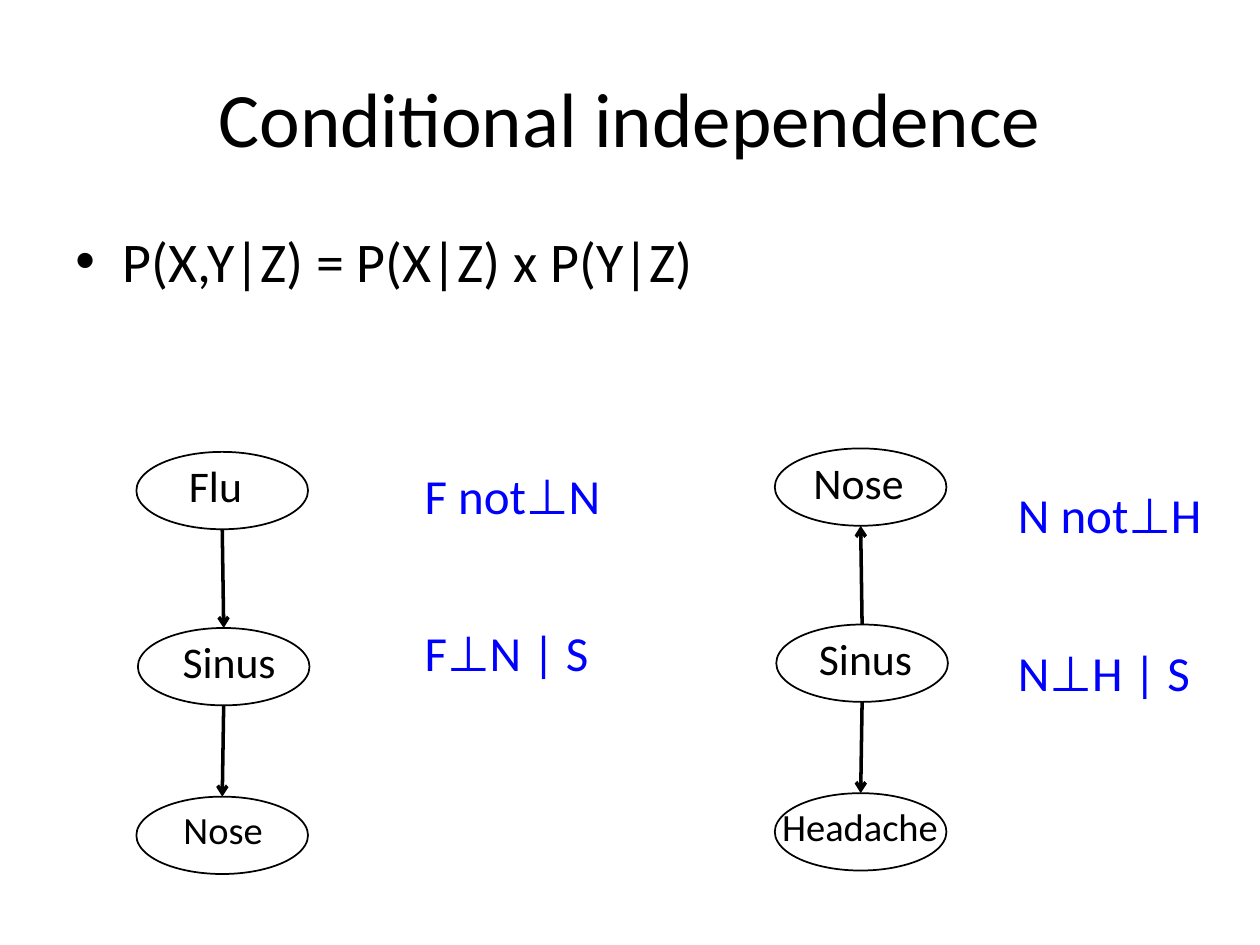
from lxml import etree
from pptx import Presentation
from pptx.dml.color import RGBColor
from pptx.enum.shapes import MSO_CONNECTOR, MSO_SHAPE
from pptx.enum.text import MSO_ANCHOR, PP_ALIGN
from pptx.oxml.ns import qn
from pptx.util import Cm, Pt

LEFT, CENTER = PP_ALIGN.LEFT, PP_ALIGN.CENTER
TOP, MIDDLE = MSO_ANCHOR.TOP, MSO_ANCHOR.MIDDLE
ELLIPSE = MSO_SHAPE.OVAL
STRAIGHT = MSO_CONNECTOR.STRAIGHT
TOP_SITE = 0

NODE_WIDTH, NODE_HEIGHT = 3.46, 1.56
NODE_STEPS = (0, 3.55, 6.95)
NODE_SHIFTS = (0, 0.03, 0)
LABEL_STYLES = ((25, 0.02, 1.32), (25, 0.02, 1.32), (22, 0.07, 1.19))
STATEMENT_STEP = 3.18


def color(value):
    return RGBColor.from_string(value)


class Painter:
    """Holds the style and the slide being drawn; lengths are centimetres."""

    font = "Calibri"
    ink = "000000"
    accent = "0000FF"

    def __init__(self, page):
        self.page = page

    def text(self, words, left, top, width, height, size, fill=ink,
             align=LEFT, anchor=TOP, wrap=True):
        box = self.page.shapes.add_textbox(Cm(left), Cm(top), Cm(width), Cm(height))
        frame = box.text_frame
        frame.word_wrap = wrap
        frame.vertical_anchor = anchor
        para = frame.paragraphs[0]
        para.text = words
        para.alignment = align
        para.font.name = self.font
        para.font.size = Pt(size)
        para.font.color.rgb = color(fill)
        return para

    def bullet(self, words, left, top, width, height, size):
        para = self.text(words, left, top, width, height, size)
        para.space_before = Pt(0.2 * size)
        properties = para._p.get_or_add_pPr()
        properties.set("marL", str(Cm(0.95)))
        properties.set("indent", str(-Cm(0.95)))
        etree.SubElement(properties, qn("a:buFont"), typeface="Arial")
        etree.SubElement(properties, qn("a:buChar"), char="•")

    def node(self, left, top):
        shape = self.page.shapes.add_shape(
            ELLIPSE, Cm(left), Cm(top), Cm(NODE_WIDTH), Cm(NODE_HEIGHT))
        shape.shadow.inherit = False
        shape.fill.background()
        shape.line.color.rgb = color(self.ink)
        shape.line.width = Pt(1)
        return shape

    def arrow(self, upper, lower, upward=False):
        """Link the bottom of one node to the top of the next."""
        start_x = upper.left + upper.width // 2
        start_y = upper.top + upper.height
        line = self.page.shapes.add_connector(
            STRAIGHT, start_x, start_y, start_x, lower.top)
        line.end_connect(lower, TOP_SITE)
        line.line.color.rgb = color(self.ink)
        line.line.width = Pt(2)
        end = "a:headEnd" if upward else "a:tailEnd"
        etree.SubElement(line.line._get_or_add_ln(), qn(end), type="arrow")
        etree.SubElement(line._element.spPr, qn("a:effectLst"))

    def chain(self, left, top, labels, first_upward=False):
        """Draw three labelled nodes, one under another, joined by arrows."""
        nodes = []
        for step, shift, style, label in zip(
                NODE_STEPS, NODE_SHIFTS, LABEL_STYLES, labels):
            words, label_left, label_width = label
            size, drop, label_height = style
            nodes.append(self.node(left + shift, top + step))
            self.text(words, label_left, top + step + drop,
                      label_width, label_height, size)
        self.arrow(nodes[0], nodes[1], first_upward)
        self.arrow(nodes[1], nodes[2])

    def statements(self, left, top, lines):
        for index, (words, width) in enumerate(lines):
            self.text(words, left, top + index * STATEMENT_STEP, width, 1.45, 28,
                      self.accent, wrap=False)


def main():
    deck = Presentation()
    deck.slide_width, deck.slide_height = Cm(25.4), Cm(19.05)
    painter = Painter(deck.slides.add_slide(deck.slide_layouts[6]))

    painter.text("Conditional independence", 1.27, 0.76, 22.86, 3.18, 44,
                 align=CENTER, anchor=MIDDLE)
    painter.bullet("P(X,Y|Z) = P(X|Z) x P(Y|Z)", 1.27, 4.45, 22.86, 2.54, 32)

    painter.chain(2.75, 9.11, (("Flu", 3.56, 2.21), ("Sinus", 3.43, 2.69),
                               ("Nose", 3.45, 4.29)))
    painter.chain(15.62, 9.04, (("Nose", 16.15, 2.72), ("Sinus", 16.26, 2.69),
                                ("Headache", 15.52, 4.29)), first_upward=True)

    painter.statements(8.31, 9.25, (("F not⊥N", 4.22), ("F⊥N | S", 3.99)))
    painter.statements(20.27, 9.65, (("N not⊥H", 4.39), ("N⊥H | S", 4.14)))
    deck.save("out.pptx")


if __name__ == "__main__":
    main()
